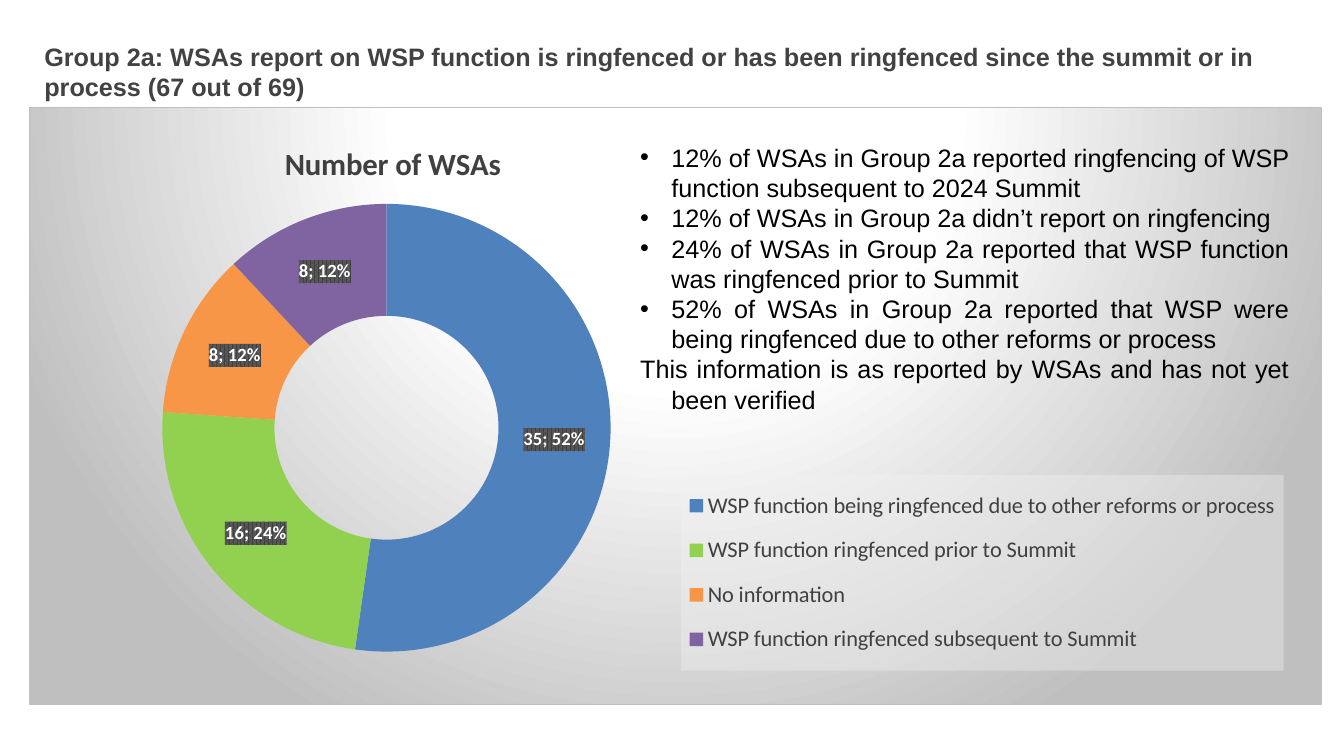
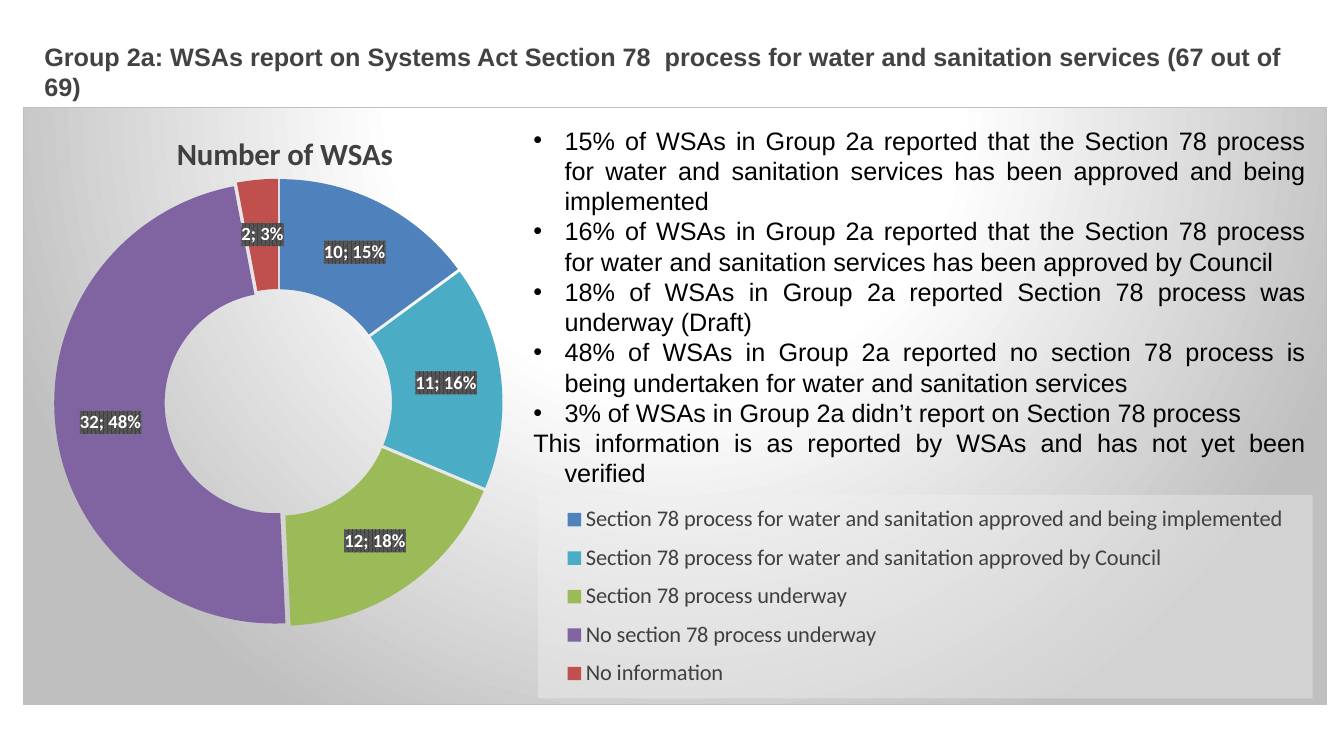
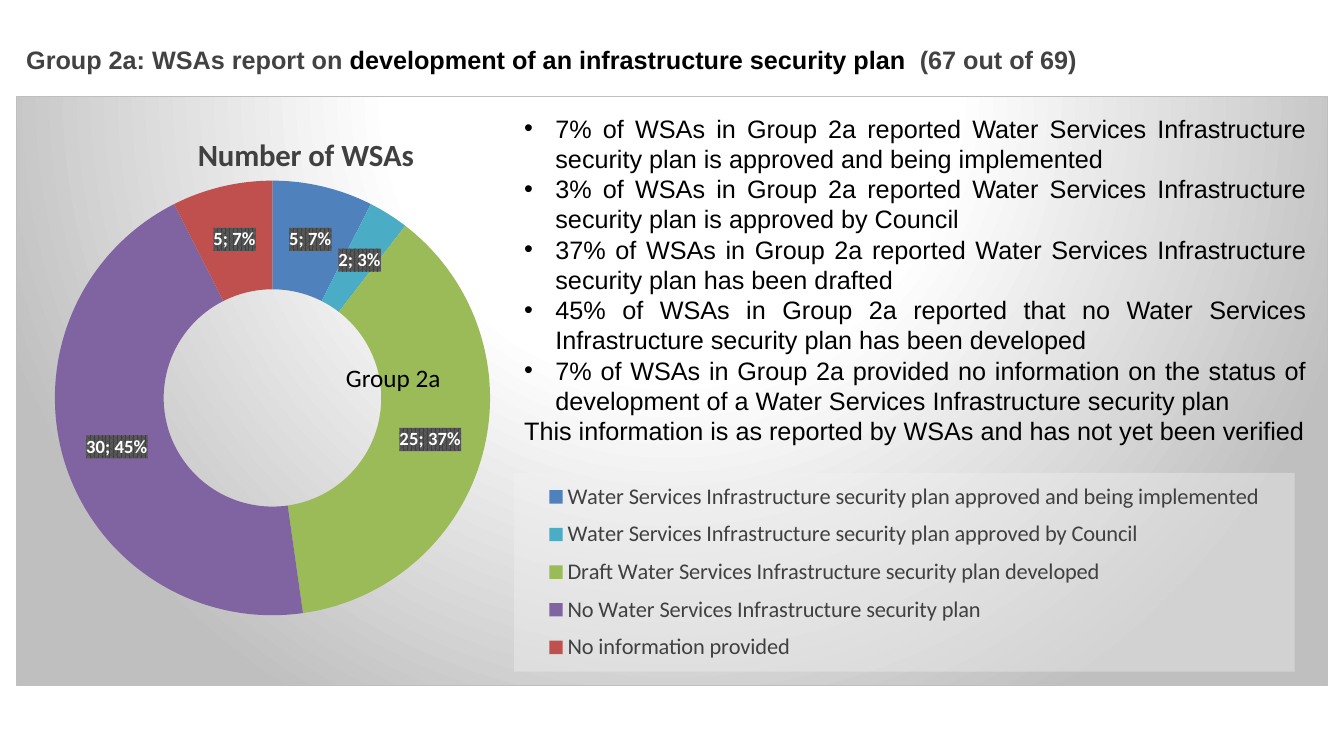
from collections import namedtuple

from lxml import etree
from pptx import Presentation
from pptx import util as u
from pptx.chart.data import CategoryChartData
from pptx.dml.color import RGBColor
from pptx.enum import chart as ch
from pptx.enum import text as t
from pptx.oxml import parse_xml
from pptx.oxml.ns import nsdecls, qn

WIDTH, HEIGHT = u.Inches(13.33), u.Inches(7.5)
WHITE = RGBColor(0xFF, 0xFF, 0xFF)
BLACK = RGBColor(0, 0, 0)
TITLE_GREY = RGBColor(0x42, 0x42, 0x42)
CHART_GREY = RGBColor(0x40, 0x40, 0x40)
STRIPE_GREY = RGBColor(0x59, 0x59, 0x59)
EDGE_GREY = RGBColor(0xBF, 0xBF, 0xBF)
LEGEND_GREY = RGBColor(0xF2, 0xF2, 0xF2)
BLUE = RGBColor(0x4F, 0x81, 0xBD)
LIME = RGBColor(0x92, 0xD0, 0x50)
ORANGE = RGBColor(0xF7, 0x96, 0x46)
PURPLE = RGBColor(0x80, 0x64, 0xA2)
TEAL = RGBColor(0x4B, 0xAC, 0xC6)
GREEN = RGBColor(0x9B, 0xBB, 0x59)
RED = RGBColor(0xC0, 0x50, 0x4D)
FIVE_STATES = [BLUE, TEAL, GREEN, PURPLE, RED]

TITLE_FONT = dict(name="Arial", size=u.Pt(18), bold=True)
FINDING_FONT = dict(name="Arial", size=u.Pt(18), bold=False)
NOTE_FONT = dict(name="Calibri", size=u.Pt(18), italic=True)
TAG_FONT = dict(name="Calibri", size=u.Pt(18))
HEADING_FONT = dict(name="Calibri", size=u.Pt(22), bold=True)
LEGEND_FONT = dict(name="Calibri", size=u.Pt(16))
LABEL_FONT = dict(name="Calibri", size=u.Pt(13.3), bold=True)

MEASURE = "Number of WSAs"
NOTE = "This information is as reported by WSAs and has not yet been verified"
HANG = u.Inches(0.31)

# Boxes hold percentages of the slide's width and height.
Box = namedtuple("Box", "left top width height")


def place(shape, box):
    shape.left, shape.width = (int(WIDTH * v / 100) for v in (box.left, box.width))
    shape.top, shape.height = (int(HEIGHT * v / 100) for v in (box.top, box.height))


def style(font, formats, color):
    for key, value in formats.items():
        setattr(font, key, value)
    font.color.rgb = color


def solid(color, alpha=100):
    return (f'<a:solidFill><a:srgbClr val="{color}">'
            f'<a:alpha val="{alpha * 1000}"/></a:srgbClr></a:solidFill>')


def shape_properties(content):
    return parse_xml(f'<c:spPr {nsdecls("c", "a")}>{content}</c:spPr>')


def set_layout(part, index, box, frame, inner=False):
    for old in part.findall(qn("c:layout")):
        part.remove(old)
    shares = dict(x=(box.left - frame.left) / frame.width,
                  y=(box.top - frame.top) / frame.height)
    if box.width:
        shares.update(w=box.width / frame.width, h=box.height / frame.height)
    target = '<c:layoutTarget val="inner"/>' if inner else ""
    modes = "".join(f'<c:{k}Mode val="edge"/>' for k in "xy")
    values = "".join(f'<c:{k} val="{v:.4f}"/>' for k, v in shares.items())
    part.insert(index, parse_xml(
        f'<c:layout {nsdecls("c")}><c:manualLayout>{target}{modes}{values}'
        '</c:manualLayout></c:layout>'))


def add_title(slide, box, segments):
    title = slide.shapes.title
    place(title, box)
    title.fill.solid()
    title.fill.fore_color.rgb = WHITE
    frame = title.text_frame
    frame.auto_size = t.MSO_AUTO_SIZE.NONE
    frame.vertical_anchor = t.MSO_ANCHOR.MIDDLE
    line = frame.paragraphs[0]
    line.alignment = t.PP_ALIGN.LEFT
    for words, color in segments:
        run = line.add_run()
        run.text = words
        style(run.font, TITLE_FONT, color)


def paint_backdrop(chart):
    stops = "".join(f'<a:gs pos="{pos}000"><a:srgbClr val="{color}"/></a:gs>'
                    for pos, color in ((0, WHITE), (39, WHITE), (100, EDGE_GREY)))
    chart._chartSpace.find(qn("c:chart")).addnext(shape_properties(
        f'<a:gradFill><a:gsLst>{stops}</a:gsLst><a:path path="circle">'
        '<a:fillToRect l="50000" t="-80000" r="50000" b="180000"/></a:path></a:gradFill>'
        f'<a:ln w="9525">{solid(EDGE_GREY)}</a:ln>'))


def label_slices(plot):
    plot.has_data_labels = True
    labels = plot.data_labels
    labels.show_value = labels.show_percentage = True
    style(labels.font, LABEL_FONT, WHITE)
    xml = labels._element
    xml.find(qn("c:txPr")).addprevious(shape_properties(
        f'<a:pattFill prst="pct75"><a:fgClr><a:srgbClr val="{CHART_GREY}"/></a:fgClr>'
        f'<a:bgClr><a:srgbClr val="{STRIPE_GREY}"/></a:bgClr></a:pattFill>'))
    flags = [e for e in xml if etree.QName(e).localname.startswith("show")
             and etree.QName(e).localname != "showLeaderLines"]
    flags[-1].addnext(parse_xml(f'<c:separator {nsdecls("c")}>; </c:separator>'))


def add_ring(slide, frame, ring, heading, legend_box, slices, explode):
    data = CategoryChartData()
    data.categories = [name for name, _, _ in slices]
    data.add_series(MEASURE, [count for _, count, _ in slices])
    holder = slide.shapes.add_chart(ch.XL_CHART_TYPE.DOUGHNUT, 0, 0, WIDTH, HEIGHT, data)
    place(holder, frame)
    chart = holder.chart
    style(chart.font, dict(name="Calibri", size=u.Pt(10)), BLACK)
    paint_backdrop(chart)

    chart.has_title = True
    chart.chart_title.text_frame.text = MEASURE
    style(chart.chart_title.text_frame.paragraphs[0].runs[0].font, HEADING_FONT, CHART_GREY)
    set_layout(chart.chart_title._element, 1, heading, frame)

    chart.has_legend = True
    legend = chart.legend
    legend.position = ch.XL_LEGEND_POSITION.RIGHT
    legend.include_in_layout = False
    style(legend.font, LEGEND_FONT, CHART_GREY)
    set_layout(legend._element, 1, legend_box, frame)
    legend._element.find(qn("c:txPr")).addprevious(
        shape_properties(solid(LEGEND_GREY, 39)))

    plot = chart.plots[0]
    plot.vary_by_categories = True
    set_layout(chart._chartSpace.chart.plotArea, 0, ring, frame, inner=True)
    series = plot.series[0]
    for index, (_, _, color) in enumerate(slices):
        fill = series.points[index].format.fill
        fill.solid()
        fill.fore_color.rgb = color
    if explode:
        series._element.find(qn("c:tx")).addnext(
            parse_xml(f'<c:explosion {nsdecls("c")} val="{explode}"/>'))
    label_slices(plot)


def add_findings(slide, box, findings, note_gap):
    body = slide.placeholders[1]
    place(body, box)
    slide.shapes._spTree.append(body._element)
    frame = body.text_frame
    frame.auto_size = t.MSO_AUTO_SIZE.NONE
    frame.text = "\n".join(findings + [NOTE])
    *bullets, note = frame.paragraphs
    for line in frame.paragraphs:
        is_note = line is note
        line.space_before = u.Pt(note_gap if is_note else 0)
        line.alignment = t.PP_ALIGN.LEFT if is_note else t.PP_ALIGN.JUSTIFY
        indent = 0 if is_note else HANG
        props = line._p.get_or_add_pPr()
        props.set("marL", str(indent))
        props.set("indent", str(-indent))
        style(line.runs[0].font, NOTE_FONT if is_note else FINDING_FONT, BLACK)
    etree.SubElement(note._p.get_or_add_pPr(), qn("a:buNone"))


def add_tag(slide, box, words):
    tag = slide.shapes.add_textbox(0, 0, 0, 0)
    place(tag, box)
    tag.text_frame.word_wrap = True
    tag.text_frame.text = words
    style(tag.text_frame.paragraphs[0].runs[0].font, TAG_FONT, BLACK)


def add_report(deck, title, title_box, frame, ring, heading, legend_box, slices,
               findings_box, findings, note_gap=21.5, explode=0):
    slide = deck.slides.add_slide(deck.slide_layouts[1])
    add_title(slide, title_box, title)
    add_ring(slide, frame, ring, heading, legend_box, slices, explode)
    add_findings(slide, findings_box, findings, note_gap)
    return slide


def main():
    deck = Presentation()
    deck.slide_width, deck.slide_height = WIDTH, HEIGHT
    two_line_title = Box(2.55, 4.67, 95.35, 9.47)

    add_report(
        deck,
        title=[("Group 2a: WSAs report on WSP function is ringfenced or has been ringfenced "
                "since the summit or in process (67 out of 69)", TITLE_GREY)],
        title_box=two_line_title,
        frame=Box(2.18, 14.13, 96.18, 79.07),
        ring=Box(12.05, 26.93, 33.38, 59.33),
        heading=Box(20.76, 18.1, 0, 0),
        legend_box=Box(50.67, 62.83, 44.87, 25.93),
        slices=[
            ("WSP function being ringfenced due to other reforms or process", 35, BLUE),
            ("WSP function ringfenced prior to Summit", 16, LIME),
            ("No information", 8, ORANGE),
            ("WSP function ringfenced subsequent to Summit", 8, PURPLE)],
        findings_box=Box(46.88, 18.13, 49.8, 41.73),
        findings=[
            "12% of WSAs in Group 2a reported ringfencing of WSP function subsequent to 2024 Summit",
            "12% of WSAs in Group 2a didn’t report on ringfencing",
            "24% of WSAs in Group 2a reported that WSP function was ringfenced prior to Summit",
            "52% of WSAs in Group 2a reported that WSP were being ringfenced due to other "
            "reforms or process"])

    add_report(
        deck,
        title=[("Group 2a: WSAs report on Systems Act Section 78  process for water and "
                "sanitation services (67 out of 69)", TITLE_GREY)],
        title_box=two_line_title,
        frame=Box(1.73, 14.13, 97, 79.07),
        ring=Box(4, 23.6, 33.38, 59.33),
        heading=Box(12.72, 16.7, 0, 0),
        legend_box=Box(40.03, 65.48, 57.68, 26.98),
        slices=list(zip(
            ["Section 78 process for water and sanitation approved and being implemented",
             "Section 78 process for water and sanitation approved by Council",
             "Section 78 process underway",
             "No section 78 process underway",
             "No information"], [10, 11, 12, 32, 2], FIVE_STATES)),
        findings_box=Box(38.93, 15.87, 58.97, 53.87),
        findings=[
            "15% of WSAs in Group 2a reported that the Section 78 process for water and "
            "sanitation services has been approved and being implemented",
            "16% of WSAs in Group 2a reported that the Section 78 process for water and "
            "sanitation services has been approved by Council",
            "18% of WSAs in Group 2a reported Section 78 process was underway (Draft)",
            "48% of WSAs in Group 2a reported no section 78 process is being undertaken for "
            "water and sanitation services",
            "3% of WSAs in Group 2a didn’t report on Section 78 process"],
        explode=3)

    security = add_report(
        deck,
        title=[("Group 2a: WSAs report on ", TITLE_GREY),
               ("development of an infrastructure security plan ", BLACK),
               (" (67 out of 69)", TITLE_GREY)],
        title_box=Box(1.2, 5.2, 95.35, 5.33),
        frame=Box(1.2, 12.67, 97.6, 78.13),
        ring=Box(4.05, 23.85, 32.4, 57.6),
        heading=Box(14.29, 16.9, 0, 0),
        legend_box=Box(38.24, 62.57, 58.12, 26.32),
        slices=list(zip(
            ["Water Services Infrastructure security plan approved and being implemented",
             "Water Services Infrastructure security plan approved by Council",
             "Draft Water Services Infrastructure security plan developed",
             "No Water Services Infrastructure security plan",
             "No information provided"], [5, 2, 25, 30, 5], FIVE_STATES)),
        findings_box=Box(38.25, 14.27, 59.7, 53.87),
        findings=[
            "7% of WSAs in Group 2a reported Water Services Infrastructure security plan is "
            "approved and being implemented",
            "3% of WSAs in Group 2a reported Water Services Infrastructure security plan is "
            "approved by Council",
            "37% of WSAs in Group 2a reported Water Services Infrastructure security plan has "
            "been drafted",
            "45% of WSAs in Group 2a reported that no Water Services Infrastructure security "
            "plan has been developed",
            "7% of WSAs in Group 2a provided no information on the status of development of a "
            "Water Services Infrastructure security plan"],
        note_gap=13)
    add_tag(security, Box(25, 47.33, 50, 5.33), "Group 2a")

    deck.save("out.pptx")


if __name__ == "__main__":
    main()
